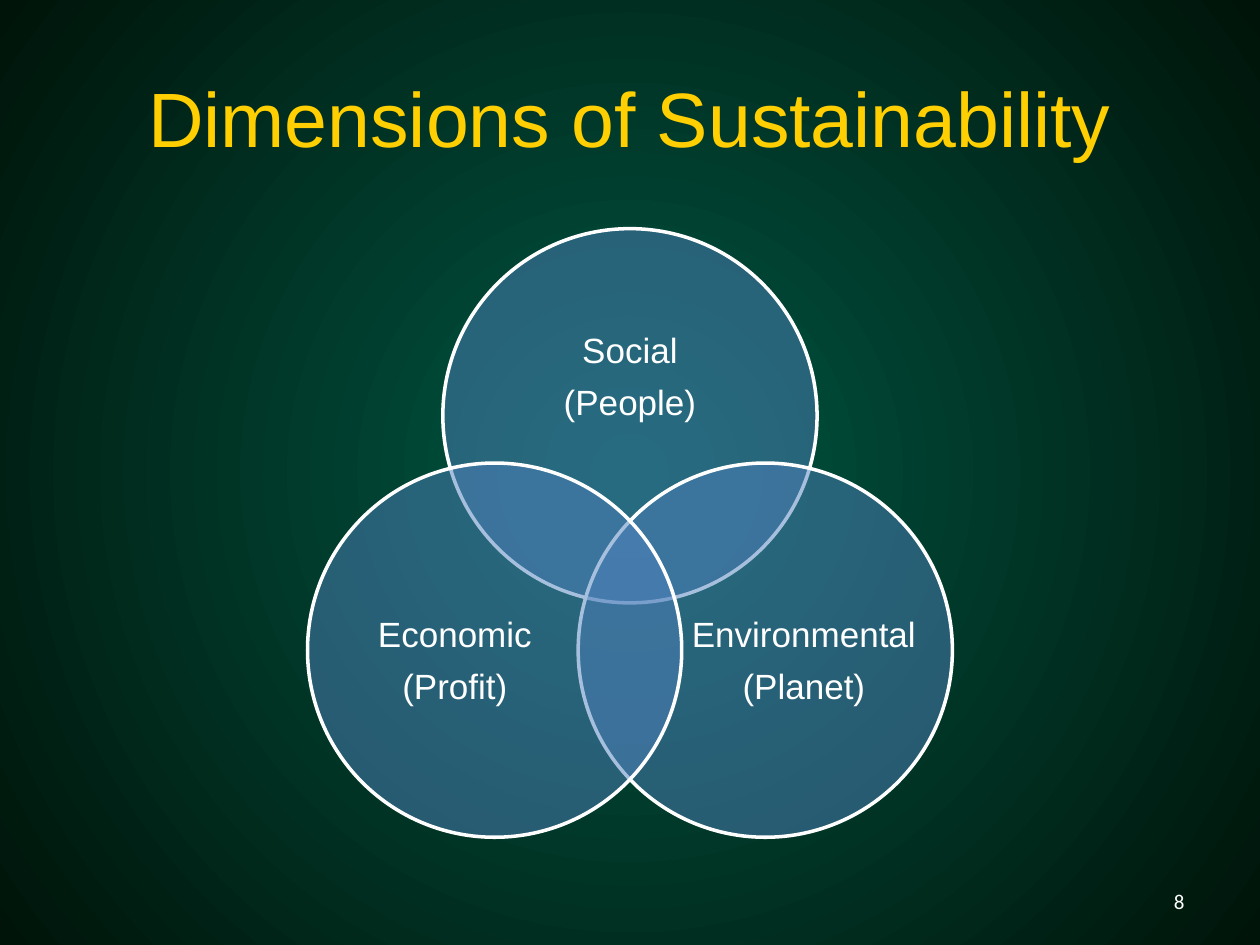
from math import cos, radians, sin

from lxml import etree
from pptx import Presentation
from pptx.dml.color import RGBColor
from pptx.enum.shapes import MSO_SHAPE
from pptx.enum.text import MSO_ANCHOR, PP_ALIGN
from pptx.oxml.ns import qn
from pptx.util import Inches, Pt

OVAL = MSO_SHAPE.OVAL
MIDDLE = MSO_ANCHOR.MIDDLE
CENTER, RIGHT = PP_ALIGN.CENTER, PP_ALIGN.RIGHT

COLORS = {
    "glow": "005643",
    "edge": "001409",
    "title": "FFCF01",
    "circle": "4F81BD",
    "white": "FFFFFF",
}

VENN_CENTER = (5, 4.54)
VENN_OFFSET = 1.24
DIAMETER = 2.97
DIMENSIONS = [
    (0, ("Social", "(People)"), (3.91, 2.33, 2.18, 1.34)),
    (120, ("Environmental", "(Planet)"), (5.49, 4.44, 1.78, 1.63)),
    (240, ("Economic", "(Profit)"), (2.72, 4.44, 1.78, 1.63)),
]


class SlideBuilder:
    """Draws styled elements on one slide."""

    def __init__(self, slide):
        self.slide = slide

    def color(self, name):
        return RGBColor.from_string(COLORS[name])

    def background(self):
        fill = self.slide.background.fill
        fill.gradient()
        for stop, name, position in zip(fill.gradient_stops, ("glow", "edge"), (0.02, 1)):
            stop.color.rgb = self.color(name)
            stop.position = position
        gradient = self.slide.element.find(".//" + qn("a:gradFill"))
        path = etree.Element(qn("a:path"), path="circle")
        center = dict.fromkeys("ltrb", "50000")
        etree.SubElement(path, qn("a:fillToRect"), center)
        gradient.replace(gradient.find(qn("a:lin")), path)

    def circle(self, shapes, center_x, center_y):
        left, top = center_x - DIAMETER / 2, center_y - DIAMETER / 2
        shape = shapes.add_shape(
            OVAL, Inches(left), Inches(top), Inches(DIAMETER), Inches(DIAMETER)
        )
        shape.shadow.inherit = False
        shape.fill.solid()
        shape.fill.fore_color.rgb = self.color("circle")
        fill_color = shape.element.spPr.find(qn("a:solidFill"))[0]
        etree.SubElement(fill_color, qn("a:alpha"), val="50000")
        shape.line.color.rgb = self.color("white")
        shape.line.width = Pt(2)

    def text(self, shapes, box, lines, size, color="white", font="Arial", align=CENTER):
        frame = shapes.add_textbox(*map(Inches, box)).text_frame
        frame.word_wrap = True
        frame.vertical_anchor = MIDDLE
        frame.text = "\n".join(lines)
        for paragraph in frame.paragraphs:
            paragraph.alignment = align
            paragraph.font.name = font
            paragraph.font.size = Pt(size)
            paragraph.font.color.rgb = self.color(color)
        return frame

    def label(self, shapes, box, lines):
        frame = self.text(shapes, box, lines, 20)
        frame.margin_left = frame.margin_right = 0
        frame.margin_top = frame.margin_bottom = 0
        for paragraph in frame.paragraphs:
            paragraph.line_spacing = 0.9
            paragraph.space_after = Pt(8)

    def venn(self):
        shapes = self.slide.shapes.add_group_shape().shapes
        for degrees, lines, box in DIMENSIONS:
            angle = radians(degrees)
            center_x = VENN_CENTER[0] + VENN_OFFSET * sin(angle)
            center_y = VENN_CENTER[1] - VENN_OFFSET * cos(angle)
            self.circle(shapes, center_x, center_y)
            self.label(shapes, box, lines)


def main():
    presentation = Presentation()
    presentation.slide_width = Inches(10)
    presentation.slide_height = Inches(7.5)
    slide = presentation.slides.add_slide(presentation.slide_layouts[6])
    builder = SlideBuilder(slide)
    builder.background()
    builder.text(
        slide.shapes, (0.5, 0.3, 9, 1.25), ["Dimensions of Sustainability"], 44, "title"
    )
    builder.venn()
    builder.text(
        slide.shapes, (7.17, 6.95, 2.33, 0.4), ["8"], 12, font="Calibri", align=RIGHT
    )
    presentation.save("out.pptx")


if __name__ == "__main__":
    main()
